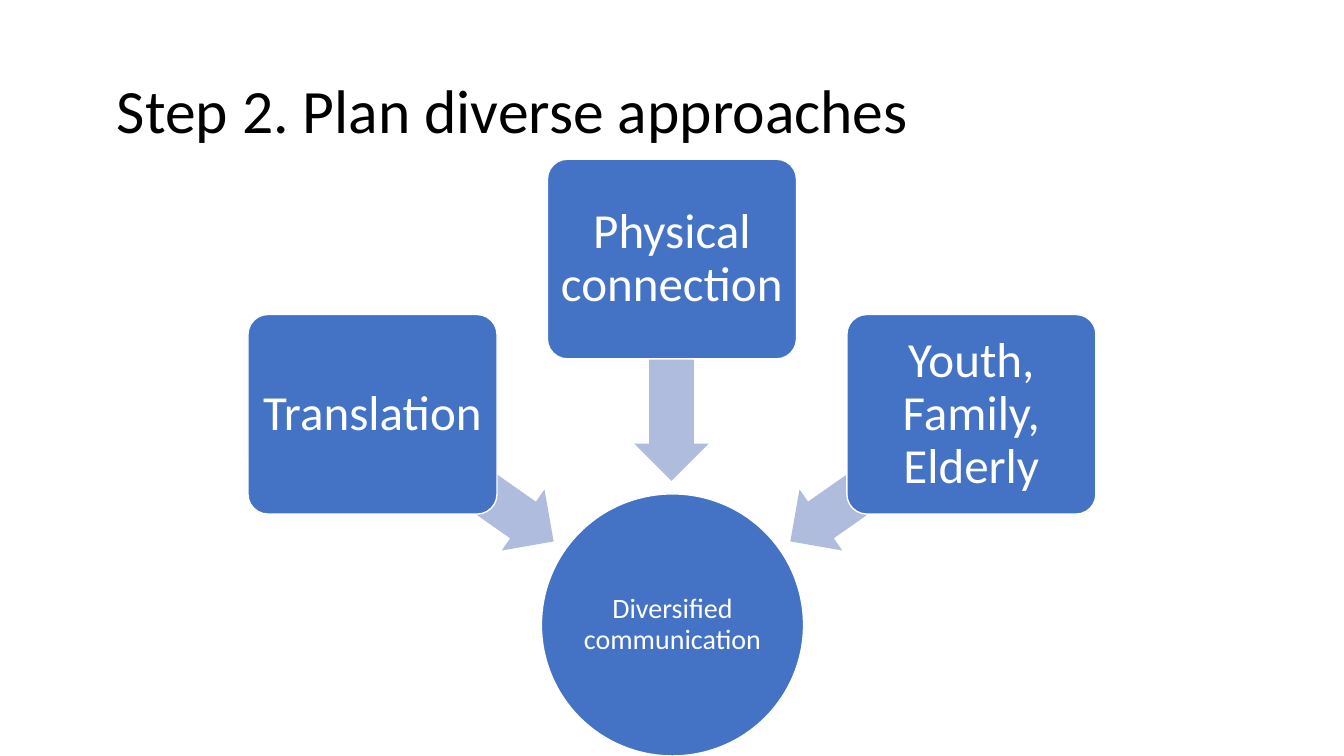
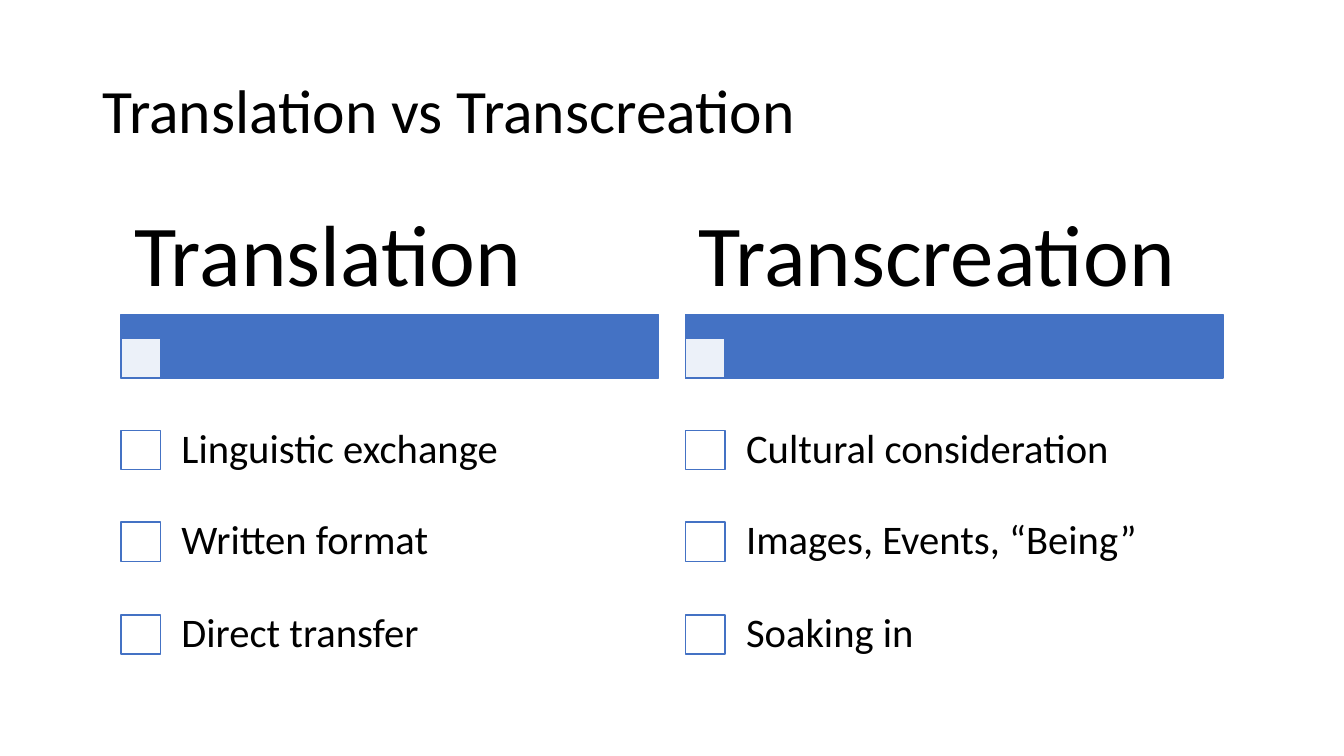
from lxml import etree
from pptx import Presentation
from pptx.dml.color import RGBColor
from pptx.enum.shapes import MSO_SHAPE
from pptx.enum.text import MSO_ANCHOR, MSO_AUTO_SIZE, PP_ALIGN
from pptx.oxml.ns import qn
from pptx.util import Pt

# Shared style
PX = 9144  # 100 px to the inch
SLIDE_WIDTH, SLIDE_HEIGHT = 1333, 750
TITLE_ONLY = 5
FONT = "Calibri"
BLUE = RGBColor(0x44, 0x72, 0xC4)
PALE_BLUE = RGBColor(0xB0, 0xBC, 0xDE)
WHITE = RGBColor(0xFF, 0xFF, 0xFF)
BLACK = RGBColor(0x00, 0x00, 0x00)
LEFT, CENTER = PP_ALIGN.LEFT, PP_ALIGN.CENTER
MIDDLE = MSO_ANCHOR.MIDDLE
NO_FIT = MSO_AUTO_SIZE.NONE
RECTANGLE = MSO_SHAPE.RECTANGLE
ROUNDED = MSO_SHAPE.ROUNDED_RECTANGLE
OVAL = MSO_SHAPE.OVAL
LEFT_ARROW = MSO_SHAPE.LEFT_ARROW


def px(*lengths):
    return [length * PX for length in lengths]


def set_all(target, values):
    for name, value in values.items():
        setattr(target, name, value)


class SlideBuilder:
    def __init__(self, deck):
        self.deck = deck
        self.page = None

    def new_page(self, title, indent=0):
        self.page = self.deck.slides.add_slide(self.deck.slide_layouts[TITLE_ONLY])
        box = self.page.shapes.title
        box.left, box.top, box.width, box.height = px(92, 40, 1150, 145)
        self.fill_text(box, title, 44, BLACK, LEFT, (10 + indent, 5))

    def fill_text(self, box, text, size, color, align, insets):
        side, edge = px(*insets)
        frame = box.text_frame
        set_all(frame, {
            "word_wrap": True, "auto_size": NO_FIT, "vertical_anchor": MIDDLE,
            "margin_left": side, "margin_right": side,
            "margin_top": edge, "margin_bottom": edge,
        })
        para = frame.paragraphs[0]
        set_all(para, {"alignment": align, "line_spacing": 0.9})
        span = para.add_run()
        span.text = text
        set_all(span.font, {"name": FONT, "size": Pt(size), "bold": False})
        span.font.color.rgb = color

    def label(self, area, text, size, insets):
        box = self.page.shapes.add_textbox(*px(*area))
        self.fill_text(box, text, size, BLACK, LEFT, insets)

    def shape(self, kind, area, fill, line=None, opacity=100, adjust=(), rotation=0):
        shape = self.page.shapes.add_shape(kind, *px(*area))
        shape.shadow.inherit = False
        shape.rotation = rotation
        for index, value in enumerate(adjust):
            shape.adjustments[index] = value
        shape.fill.solid()
        shape.fill.fore_color.rgb = fill
        if opacity < 100:
            color = shape.element.spPr.find(qn("a:solidFill"))[0]
            etree.SubElement(color, qn("a:alpha"), val=str(opacity * 1000))
        if line is None:
            shape.line.fill.background()
        else:
            shape.line.color.rgb = line
            shape.line.width = Pt(1)
        return shape

    def node(self, kind, area, text, size, inset, adjust=()):
        shape = self.shape(kind, area, BLUE, WHITE, adjust=adjust)
        self.fill_text(shape, text, size, WHITE, CENTER, (inset, inset))

    def checkbox(self, left, top, opacity=100):
        self.shape(RECTANGLE, (left, top, 39, 39), WHITE, BLUE, opacity)

    def checklist(self, left, heading, items):
        self.shape(RECTANGLE, (left, 312, 533, 63), BLUE, BLUE)
        self.checkbox(left, 336, opacity=90)
        self.label((left, 200, 533, 113), heading, 62, (13, 9))
        for row, item in enumerate(items):
            top = 401 + row * 183 // 2
            self.checkbox(left, top + 26)
            self.label((left + 37, top, 496, 91), item, 29, (23, 23))


def approaches_page(builder):
    builder.new_page("Step 2. Plan diverse approaches", indent=14)
    builder.node(OVAL, (537, 490, 260, 260), "Diversified communication", 20, 1)
    # Each approach points at the circle
    approaches = [
        ("Translation", 312, 437, 215),
        ("Physical connection", 158, 330, 270),
        ("Youth, Family, Elderly", 312, 437, 325),
    ]
    for column, (text, top, arrow_top, rotation) in enumerate(approaches):
        arrow_left = 349 + column * 415 // 2
        builder.shape(LEFT_ARROW, (arrow_left, arrow_top, 220, 74), PALE_BLUE,
                      adjust=(0.6, 0.5), rotation=rotation)
        builder.node(ROUNDED, (246 + column * 297, top, 247, 198), text, 35, 7,
                     adjust=(0.1,))


def comparison_page(builder):
    builder.new_page("Translation vs Transcreation")
    columns = {
        "Translation": ["Linguistic exchange", "Written format", "Direct transfer"],
        "Transcreation": ["Cultural consideration", "Images, Events, “Being”",
                          "Soaking in"],
    }
    for column, (heading, items) in enumerate(columns.items()):
        builder.checklist(120 + column * 560, heading, items)


def main():
    deck = Presentation()
    deck.slide_width, deck.slide_height = px(SLIDE_WIDTH, SLIDE_HEIGHT)
    builder = SlideBuilder(deck)
    approaches_page(builder)
    comparison_page(builder)
    deck.save("out.pptx")


if __name__ == "__main__":
    main()
